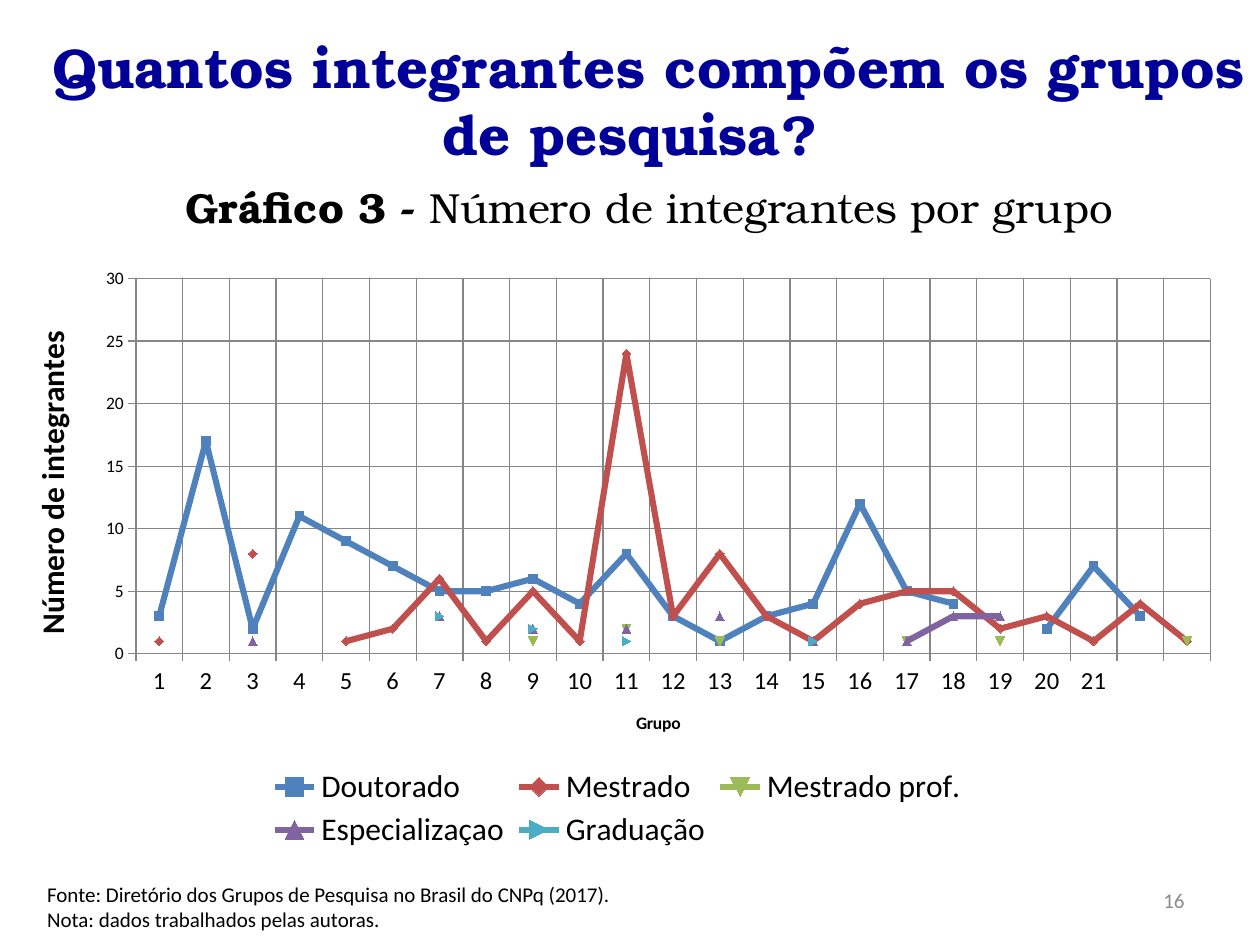
from dataclasses import dataclass

from lxml import etree
from pptx import Presentation
from pptx.chart.data import CategoryChartData
from pptx.dml.color import RGBColor
from pptx.enum.chart import XL_CHART_TYPE, XL_LEGEND_POSITION, XL_TICK_MARK
from pptx.enum.text import MSO_ANCHOR, MSO_AUTO_SIZE, PP_ALIGN
from pptx.oxml.ns import qn
from pptx.util import Cm, Pt

LINES = XL_CHART_TYPE.LINE_MARKERS
BOTTOM = XL_LEGEND_POSITION.BOTTOM
OUT = XL_TICK_MARK.OUTSIDE
NONE = XL_TICK_MARK.NONE
TOP, MIDDLE = MSO_ANCHOR.TOP, MSO_ANCHOR.MIDDLE
LEFT, CENTER, RIGHT = PP_ALIGN.LEFT, PP_ALIGN.CENTER, PP_ALIGN.RIGHT
FIXED = MSO_AUTO_SIZE.NONE


@dataclass(frozen=True)
class Theme:
    serif: str = "TeX Gyre Bonum"
    sans: str = "Calibri"
    navy: str = "000099"
    black: str = "000000"
    gray: str = "8C8C8C"
    grid: str = "868686"
    title: int = 32
    head: int = 24
    label: int = 18
    group: int = 14
    note: int = 12
    tick: int = 10


@dataclass(frozen=True)
class Box:
    """Place on the slide, in centimetres."""
    x: float
    y: float
    w: float
    h: float


@dataclass(frozen=True)
class Part:
    """One run of text."""
    text: str
    bold: bool = False


@dataclass(frozen=True)
class Level:
    """One line of the chart: value by group number."""
    name: str
    color: str
    vals: dict


THEME = Theme()
GROUPS = 23
NAMED = 21  # the last groups carry no label


def run_on(first: int, *vals) -> dict:
    return dict(enumerate(vals, first))


LEVELS = [
    Level("Doutorado", "4F81BD",
          run_on(1, 3, 17, 2, 11, 9, 7, 5, 5, 6, 4, 8, 3, 1, 3, 4, 12, 5, 4)
          | run_on(20, 2, 7, 3)),
    Level("Mestrado", "C0504D",
          {1: 1, 3: 8} | run_on(5, 1, 2, 6, 1, 5, 1, 24, 3, 8, 3, 1, 4,
                                5, 5, 2, 3, 1, 4, 1)),
    Level("Mestrado prof.", "9BBB59",
          {9: 1, 11: 2, 13: 1, 17: 1, 19: 1, 23: 1}),
    Level("Especializaçao", "8064A2",
          {3: 1, 7: 3, 9: 2, 11: 2, 13: 3, 15: 1, 17: 1, 18: 3, 19: 3}),
    Level("Graduação", "4BACC6", {7: 3, 9: 2, 11: 1, 15: 1}),
]


def style(font, size: int, color: str, face: str, bold: bool = False) -> None:
    font.size, font.name, font.bold = Pt(size), face, bold
    font.color.rgb = RGBColor.from_string(color)


def place(shape, box: Box) -> None:
    shape.left, shape.top = Cm(box.x), Cm(box.y)
    shape.width, shape.height = Cm(box.w), Cm(box.h)


def add_text(slide, box: Box, parts: list[Part], size: int, color: str,
             face: str, align=LEFT, anchor=TOP, shape=None) -> None:
    """Fill the given shape, or a new text box, with one paragraph a line."""
    shape = shape or slide.shapes.add_textbox(0, 0, 0, 0)
    place(shape, box)
    frame = shape.text_frame
    frame.word_wrap, frame.auto_size = True, FIXED
    frame.vertical_anchor = anchor
    frame.text = parts[0].text
    for para in frame.paragraphs:
        para.alignment = align
        for run in para.runs:
            style(run.font, size, color, face, parts[0].bold)
    for part in parts[1:]:
        run = frame.paragraphs[-1].add_run()
        run.text = part.text
        style(run.font, size, color, face, part.bold)


def set_layout(owner, box: Box, inner: bool = False) -> etree._Element:
    """Make a manual layout; the box holds shares of the chart area."""
    for old in owner.findall(qn("c:layout")):
        owner.remove(old)
    layout = etree.Element(qn("c:layout"))
    manual = etree.SubElement(layout, qn("c:manualLayout"))
    marks = {"layoutTarget": "inner"} if inner else {}
    marks |= {"xMode": "edge", "yMode": "edge"}
    marks |= {"x": box.x, "y": box.y, "w": box.w, "h": box.h}
    for tag, val in marks.items():
        etree.SubElement(manual, qn(f"c:{tag}")).set("val", str(val))
    return layout


def set_axis(axis, title: str, size: int, tick: int) -> None:
    axis.has_title = True
    frame = axis.axis_title.text_frame
    frame.text = title
    style(frame.paragraphs[0].runs[0].font, size, THEME.black, THEME.sans, True)
    style(axis.tick_labels.font, tick, THEME.black, THEME.sans)
    axis.major_tick_mark, axis.minor_tick_mark = OUT, NONE
    axis.has_major_gridlines = True
    for line in (axis.format.line, axis.major_gridlines.format.line):
        line.color.rgb = RGBColor.from_string(THEME.grid)
        line.width = Pt(0.75)


def add_graph(slide, box: Box) -> None:
    span = range(1, GROUPS + 1)
    data = CategoryChartData()
    data.categories = [str(n) if n <= NAMED else "" for n in span]
    for level in LEVELS:
        data.add_series(level.name, [level.vals.get(n) for n in span])
    chart = slide.shapes.add_chart(LINES, Cm(box.x), Cm(box.y), Cm(box.w),
                                   Cm(box.h), data).chart
    chart.has_title = False
    style(chart.font, THEME.tick, THEME.black, THEME.sans)

    # Lines and markers
    chart.plots[0].vary_by_categories = False
    for line, level in zip(chart.plots[0].series, LEVELS):
        color = RGBColor.from_string(level.color)
        line.smooth = False
        line.format.line.color.rgb = color
        line.format.line.width = Pt(3.5)
        line.marker.size = 5
        fill = line.marker.format.fill
        fill.solid()
        fill.fore_color.rgb = color
        line.marker.format.line.color.rgb = color

    # Axes
    set_axis(chart.category_axis, "Grupo", THEME.tick, THEME.group)
    scale = chart.value_axis
    set_axis(scale, "Número de integrantes", THEME.label, THEME.tick)
    scale.minimum_scale, scale.maximum_scale, scale.major_unit = 0, 30, 5

    # Legend and plot area
    chart.has_legend = True
    legend = chart.legend
    legend.position, legend.include_in_layout = BOTTOM, False
    style(legend.font, THEME.label, THEME.black, THEME.sans)
    key = legend._element
    key.find(qn("c:legendPos")).addnext(
        set_layout(key, Box(0.21, 0.84, 0.58, 0.15)))
    area = chart._chartSpace.chart.plotArea
    area.insert(0, set_layout(area, Box(0.11, 0.04, 0.87, 0.62), True))


def main() -> None:
    deck = Presentation()
    deck.slide_width, deck.slide_height = Cm(25.4), Cm(19.05)
    slide = deck.slides.add_slide(deck.slide_layouts[5])

    # Heading
    add_text(slide, Box(0, 0.53, 25.4, 3),
             [Part("  Quantos integrantes compõem os grupos de pesquisa?", True)],
             THEME.title, THEME.navy, THEME.serif, CENTER,
             shape=slide.shapes.title)
    add_text(slide, Box(3.5, 3.53, 19.76, 2.31),
             [Part("Gráfico 3 - ", True),
              Part("Número de integrantes por grupo")],
             THEME.head, THEME.black, THEME.serif)

    # Source note and page number
    add_text(slide, Box(0.7, 17.65, 24.7, 1.27),
             [Part("Fonte: Diretório dos Grupos de Pesquisa no Brasil do CNPq "
                   "(2017).\nNota: dados trabalhados pelas autoras.")],
             THEME.note, THEME.black, THEME.sans)
    add_text(slide, Box(18.2, 17.65, 5.93, 1.01), [Part("16")],
             THEME.note, THEME.gray, THEME.sans, RIGHT, MIDDLE)

    add_graph(slide, Box(0, 5.13, 24.9, 12.2))
    deck.save("out.pptx")


if __name__ == "__main__":
    main()
